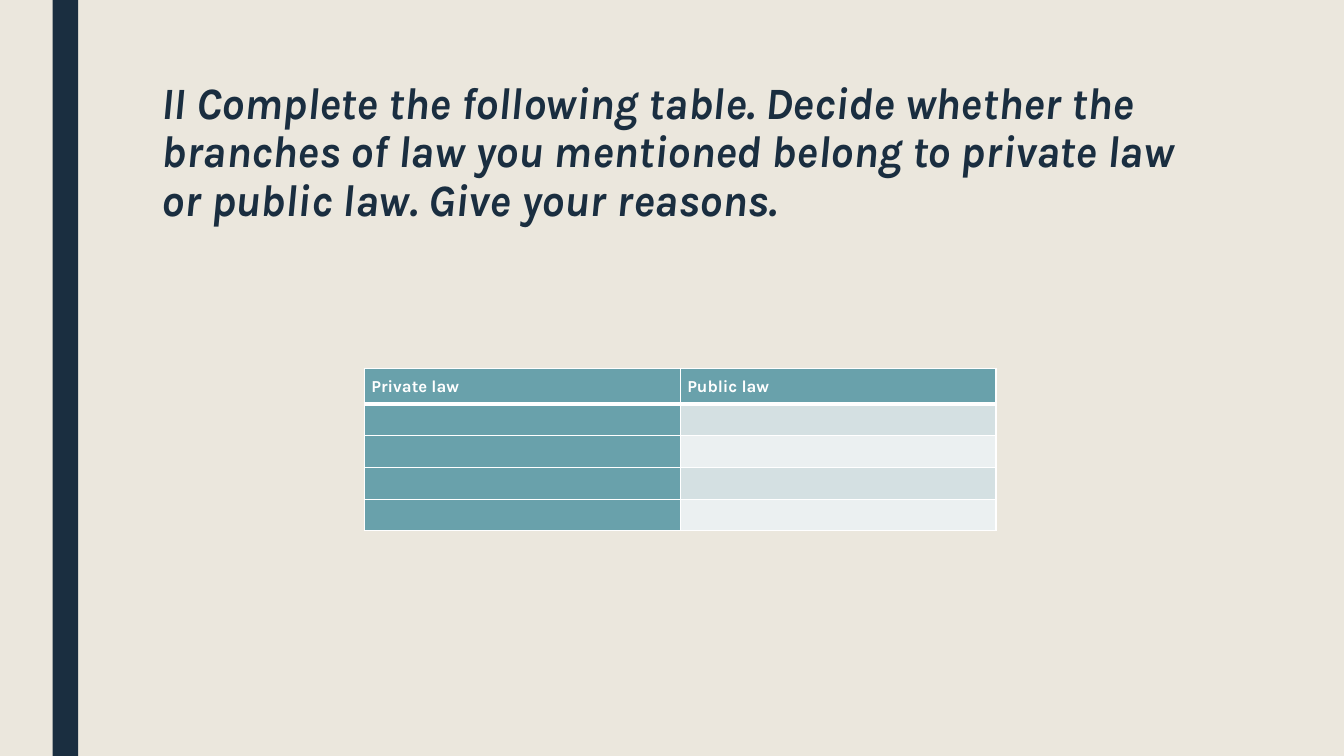
import dataclasses

import lxml.etree
import pptx
import pptx.dml.color
import pptx.enum.shapes
import pptx.enum.text
import pptx.oxml.ns
import pptx.util

Cm = pptx.util.Cm
Pt = pptx.util.Pt


@dataclasses.dataclass(frozen=True)
class Theme:
    font: str = "Karla"
    paper: str = "EBE7DD"
    navy: str = "1A2E40"
    teal: str = "69A1AB"
    white: str = "FFFFFF"
    bands: tuple = ("D4E0E2", "EBF0F1")
    title: int = 32
    cell: int = 12
    rule: int = 1
    thick: int = 3


THEME = Theme()


def paint(fill, color):
    fill.solid()
    fill.fore_color.rgb = pptx.dml.color.RGBColor.from_string(color)


def style(run, size, color, italic=False):
    font = run.font
    font.name = THEME.font
    font.size = Pt(size)
    font.bold = True
    font.italic = italic
    font.color.rgb = pptx.dml.color.RGBColor.from_string(color)


def add_node(parent, tag, **attrs):
    return lxml.etree.SubElement(parent, pptx.oxml.ns.qn(tag), **attrs)


def add_edge(cell, side, width):
    props = cell._tc.get_or_add_tcPr()
    line = add_node(props, "a:ln" + side, w=str(Pt(width)))
    add_node(add_node(line, "a:solidFill"), "a:srgbClr", val=THEME.white)


def add_bar(slide, left, top, width, height):
    kind = pptx.enum.shapes.MSO_SHAPE.RECTANGLE
    bar = slide.shapes.add_shape(kind, left, top, width, height)
    bar.shadow.inherit = False
    paint(bar.fill, THEME.navy)
    bar.line.fill.background()


def add_title(slide, text, left, top, width, height):
    title = slide.shapes.title
    title.left, title.top, title.width, title.height = left, top, width, height
    frame = title.text_frame
    frame.text = text
    frame.word_wrap = True
    frame.auto_size = pptx.enum.text.MSO_AUTO_SIZE.NONE
    frame.vertical_anchor = pptx.enum.text.MSO_ANCHOR.TOP
    para = frame.paragraphs[0]
    para.alignment = pptx.enum.text.PP_ALIGN.LEFT
    para.line_spacing = 0.9
    style(para.runs[0], THEME.title, THEME.navy, italic=True)


def fill_cell(cell, row, col, text):
    head = row == 0
    cell.margin_left = cell.margin_right = Cm(0.18)
    cell.margin_top = cell.margin_bottom = Cm(0.18 if head else 0.1)
    for side in "LRTB":
        joint = (row, side) in ((0, "B"), (1, "T"))
        add_edge(cell, side, THEME.thick if joint else THEME.rule)
    lead = head or col == 0
    paint(cell.fill, THEME.teal if lead else THEME.bands[(row - 1) % 2])
    para = cell.text_frame.paragraphs[0]
    if head:
        para.text = text
        para.alignment = pptx.enum.text.PP_ALIGN.JUSTIFY
        para.line_spacing = 1.07
        style(para.runs[0], THEME.cell, THEME.white)
    else:
        end = add_node(para._p, "a:endParaRPr", sz=str(THEME.cell * 100))
        add_node(end, "a:latin", typeface=THEME.font)


def add_grid(slide, heads, count, left, top, width, height):
    first = Cm(0.9)
    frame = slide.shapes.add_table(count + 1, len(heads), left, top, width, height)
    table = frame.table
    table.horz_banding = False
    for row, line in enumerate(table.rows):
        line.height = (height - first) // count if row else first
        for col, head in enumerate(heads):
            fill_cell(table.cell(row, col), row, col, head)


def main():
    deck = pptx.Presentation()
    deck.slide_width, deck.slide_height = Cm(33.87), Cm(19.05)
    slide = deck.slides.add_slide(deck.slide_layouts[5])
    paint(slide.background.fill, THEME.paper)
    add_bar(slide, Cm(1.33), Cm(0), Cm(0.64), deck.slide_height)
    add_title(
        slide,
        "II Complete the following table. Decide whether the branches of law "
        "you mentioned belong to private law or public law. Give your reasons.",
        Cm(3.81), Cm(1.9), Cm(26.67), Cm(4.11),
    )
    add_grid(
        slide, ("Private law", "Public law"), 4,
        Cm(9.18), Cm(9.28), Cm(15.92), Cm(4.1),
    )
    deck.save("out.pptx")


if __name__ == "__main__":
    main()
